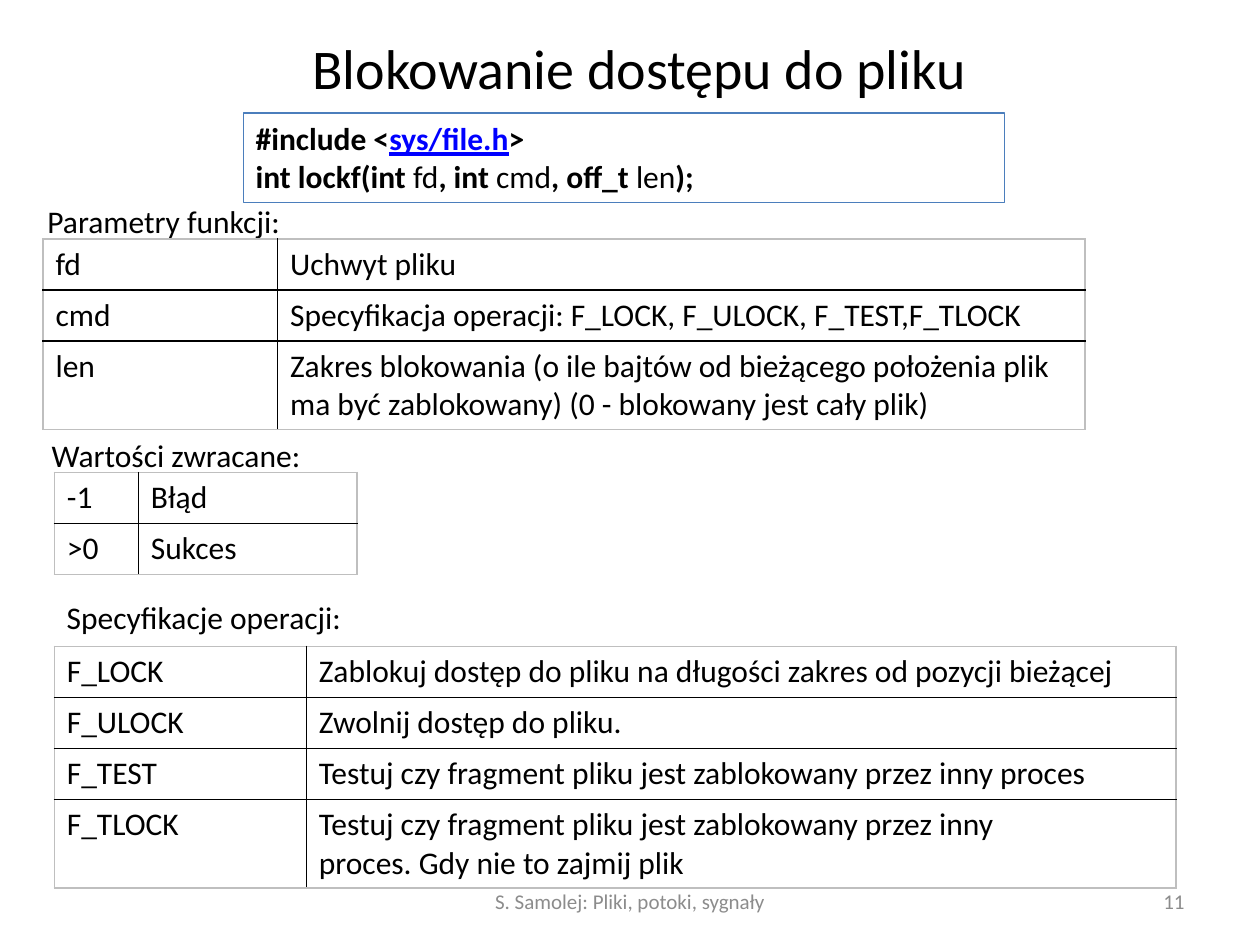
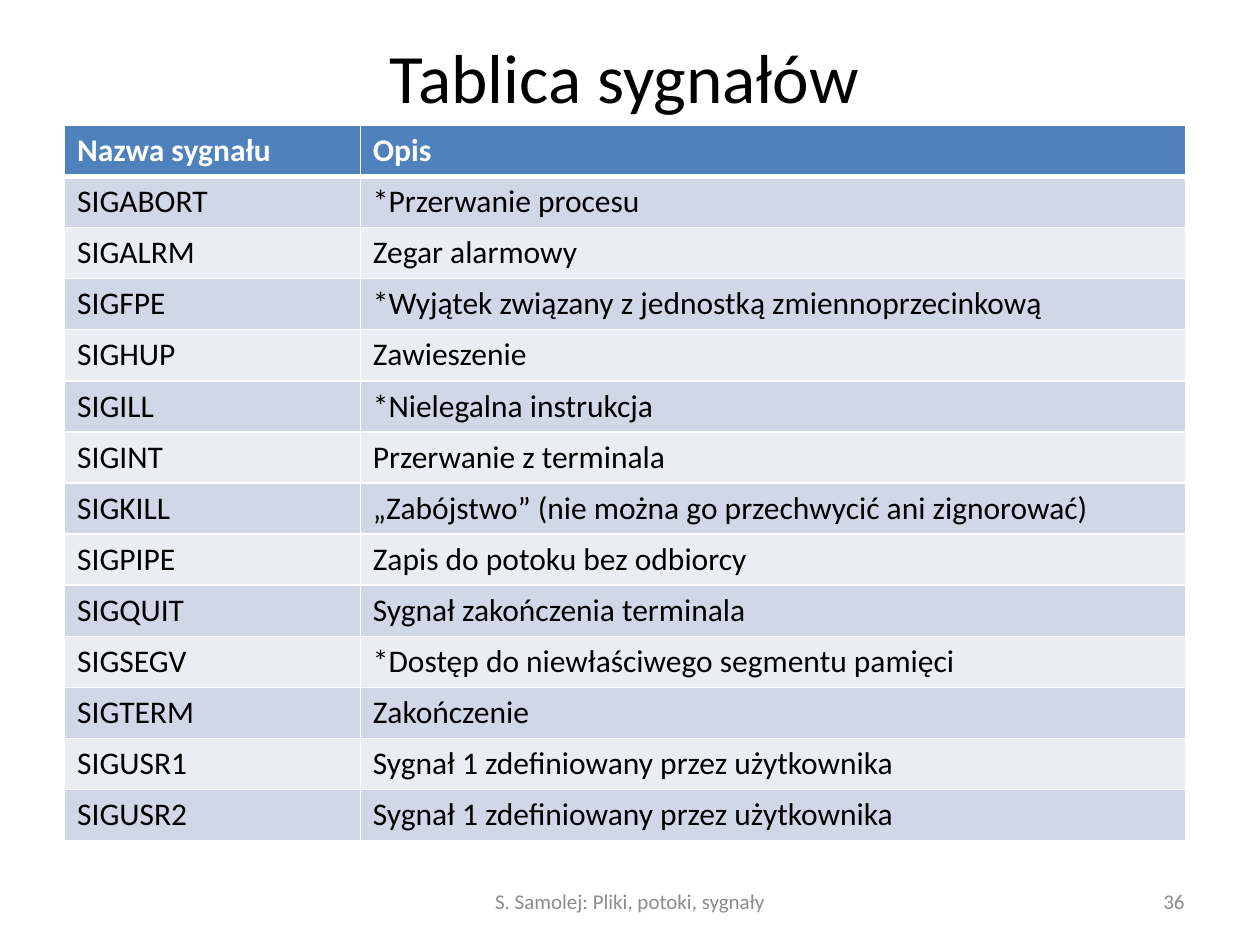
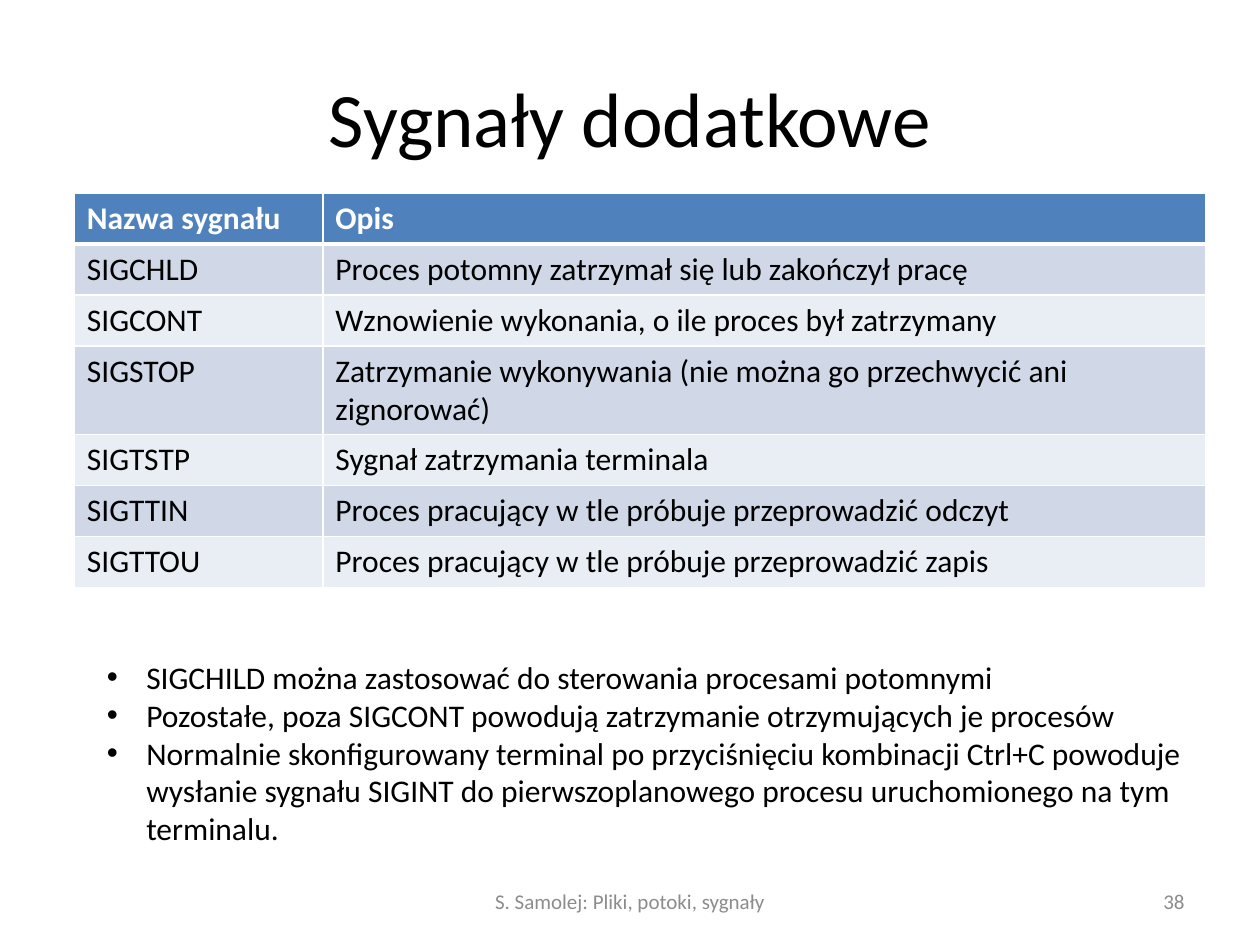
from lxml import etree
from pptx import Presentation
from pptx.dml.color import RGBColor
from pptx.enum import shapes, text
from pptx.oxml import ns
from pptx.util import Pt

BLACK = RGBColor(0x00, 0x00, 0x00)
WHITE = RGBColor(0xFF, 0xFF, 0xFF)
GREY = RGBColor(0x8C, 0x8C, 0x8C)
PALE = RGBColor(0xBF, 0xBF, 0xBF)
LINK = RGBColor(0x00, 0x00, 0xFF)
OUTLINE = RGBColor(0x4B, 0x7E, 0xBC)
HEADER = RGBColor(0x4F, 0x81, 0xBD)
BANDS = [RGBColor(0xE9, 0xED, 0xF4), RGBColor(0xD0, 0xD8, 0xE8)]

FONT = "Calibri"
FOOTER = "S. Samolej: Pliki, potoki, sygnały"
ROW, TALL_ROW = 29.2, 50.4
CENTER, RIGHT = text.PP_ALIGN.CENTER, text.PP_ALIGN.RIGHT
MIDDLE = text.MSO_ANCHOR.MIDDLE


def write(tf, paragraphs, color=BLACK, size=18, align=None, anchor=None):
    tf.word_wrap = True
    tf.vertical_anchor = anchor
    for i, runs in enumerate(paragraphs):
        p = tf.paragraphs[0] if i == 0 else tf.add_paragraph()
        p.alignment = align
        for words, bold in runs:
            r = p.add_run()
            r.text = words
            r.font.color.rgb = color
            for key, value in {"name": FONT, "size": Pt(size), "bold": bold}.items():
                setattr(r.font, key, value)


def add_grid(s, left, top, widths, rows, tall=None, banded=False):
    last_row, last_col = len(rows) - 1, len(widths) - 1
    heights = [TALL_ROW if i == tall else ROW for i in range(len(rows))]
    table = s.shapes.add_table(len(rows), len(widths), Pt(left), Pt(top),
                               Pt(sum(widths)), Pt(sum(heights))).table
    table.first_row = banded
    table.horz_banding = False
    for column, width in zip(table.columns, widths):
        column.width = Pt(width)
    for i, row in enumerate(rows):
        table.rows[i].height = Pt(heights[i])
        for j, words in enumerate(row):
            cell = table.cell(i, j)
            head = banded and i == 0
            write(cell.text_frame, [[(line, head)] for line in words.split("\n")],
                  WHITE if head else BLACK)
            edges = {"lnL": j == 0, "lnR": j == last_col, "lnT": i == 0, "lnB": i == last_row}
            for tag, outer in edges.items():
                thick = banded and (i, tag) in [(0, "lnB"), (1, "lnT")]
                color = WHITE if banded else PALE if outer else BLACK
                ln = etree.SubElement(cell._tc.get_or_add_tcPr(), ns.qn("a:" + tag),
                                      w=str(Pt(3 if thick else 1)))
                fill = etree.SubElement(ln, ns.qn("a:solidFill"))
                etree.SubElement(fill, ns.qn("a:srgbClr"), val=str(color))
            if banded:
                cell.fill.solid()
                cell.fill.fore_color.rgb = HEADER if head else BANDS[i % 2]
            else:
                cell.fill.background()


prs = Presentation()
prs.slide_width, prs.slide_height = Pt(720), Pt(540)

titles = [
    ("Blokowanie dostępu do pliku", 32, 658.8, 33.1, "11"),
    ("Tablica sygnałów", 39.6, 641.5, 43.9, "36"),
    ("Sygnały dodatkowe", 44, 648, 90, "38"),
]
for title, size, width, height, number in titles:
    s = prs.slides.add_slide(prs.slide_layouts[6])
    for words, box, color, points, align in [
        (title, (36, 21.6, width, height), BLACK, size, CENTER),
        (FOOTER, (246, 500.5, 228, 28.75), GREY, 12, CENTER),
        (number, (516, 500.5, 168, 28.75), GREY, 12, RIGHT),
    ]:
        sp = s.shapes.add_textbox(*map(Pt, box))
        write(sp.text_frame, [[(words, False)]], color, points, align, MIDDLE)

locking, signals, extra = prs.slides

sp = locking.shapes.add_shape(shapes.MSO_SHAPE.RECTANGLE, Pt(139), Pt(64.6), Pt(435), Pt(51))
sp.shadow.inherit = False
sp.fill.background()
sp.line.color.rgb = OUTLINE
sp.line.width = Pt(0.75)
write(sp.text_frame, [
    [("#include <", True), ("sys/file.h", True), (">", True)],
    [("int lockf(int ", True), ("fd", False), (", int ", True), ("cmd", False),
     (", off_t ", True), ("len", False), (");", True)],
], align=text.PP_ALIGN.LEFT, anchor=text.MSO_ANCHOR.TOP)
link = sp.text_frame.paragraphs[0].runs[1].font
link.color.rgb = LINK
link.underline = True

for label, left, top, width in [
    ("Parametry funkcji:", 20, 111.6, 164),
    ("Wartości zwracane:", 22.5, 245.5, 164),
    ("Specyfikacje operacji:", 31, 338, 176),
]:
    sp = locking.shapes.add_textbox(Pt(left), Pt(top), Pt(width), Pt(29))
    write(sp.text_frame, [[(label, False)]])

add_grid(locking, 24.6, 136.6, [134, 461.5], [
    ("fd", "Uchwyt pliku"),
    ("cmd", "Specyfikacja operacji: F_LOCK, F_ULOCK, F_TEST,F_TLOCK"),
    ("len", "Zakres blokowania (o ile bajtów od bieżącego położenia plik ma być "
            "zablokowany) (0 - blokowany jest cały plik)"),
], tall=2)
add_grid(locking, 31, 270, [48, 125], [("-1", "Błąd"), (">0", "Sukces")])
add_grid(locking, 31, 369.3, [144, 497], [
    ("F_LOCK", "Zablokuj dostęp do pliku na długości zakres od pozycji bieżącej"),
    ("F_ULOCK", "Zwolnij dostęp do pliku."),
    ("F_TEST", "Testuj czy fragment pliku jest zablokowany przez inny proces"),
    ("F_TLOCK", "Testuj czy fragment pliku jest zablokowany przez inny\n"
                "proces. Gdy nie to zajmij plik"),
], tall=3)

columns = ("Nazwa sygnału", "Opis")
add_grid(signals, 36.9, 71.6, [169, 471.5], [
    columns,
    ("SIGABORT", "*Przerwanie procesu"),
    ("SIGALRM", "Zegar alarmowy"),
    ("SIGFPE", "*Wyjątek związany z jednostką zmiennoprzecinkową"),
    ("SIGHUP", "Zawieszenie"),
    ("SIGILL", "*Nielegalna instrukcja"),
    ("SIGINT", "Przerwanie z terminala"),
    ("SIGKILL", "„Zabójstwo” (nie można go przechwycić ani zignorować)"),
    ("SIGPIPE", "Zapis do potoku bez odbiorcy"),
    ("SIGQUIT", "Sygnał zakończenia terminala"),
    ("SIGSEGV", "*Dostęp do niewłaściwego segmentu pamięci"),
    ("SIGTERM", "Zakończenie"),
    ("SIGUSR1", "Sygnał 1 zdefiniowany przez użytkownika"),
    ("SIGUSR2", "Sygnał 1 zdefiniowany przez użytkownika"),
], banded=True)

add_grid(extra, 42.5, 110.2, [142, 504.5], [
    columns,
    ("SIGCHLD", "Proces potomny zatrzymał się lub zakończył pracę"),
    ("SIGCONT", "Wznowienie wykonania, o ile proces był zatrzymany"),
    ("SIGSTOP", "Zatrzymanie wykonywania (nie można go przechwycić ani zignorować)"),
    ("SIGTSTP", "Sygnał zatrzymania terminala"),
    ("SIGTTIN", "Proces pracujący w tle próbuje przeprowadzić odczyt"),
    ("SIGTTOU", "Proces pracujący w tle próbuje przeprowadzić zapis"),
], tall=3, banded=True)

remarks = [
    "SIGCHILD można zastosować do sterowania procesami potomnymi",
    "Pozostałe, poza SIGCONT powodują zatrzymanie otrzymujących je procesów",
    "Normalnie skonfigurowany terminal po przyciśnięciu kombinacji Ctrl+C powoduje wysłanie "
    "sygnału SIGINT do pierwszoplanowego procesu uruchomionego na tym terminalu.",
]
sp = extra.shapes.add_textbox(Pt(54), Pt(372.5), Pt(646.5), Pt(116.5))
write(sp.text_frame, [[(remark, False)] for remark in remarks])
for p in sp.text_frame.paragraphs:
    pPr = p._p.get_or_add_pPr()
    pPr.set("marL", str(Pt(22.5)))
    pPr.set("indent", str(-Pt(22.5)))
    etree.SubElement(pPr, ns.qn("a:buFont"), typeface="Arial")
    etree.SubElement(pPr, ns.qn("a:buChar"), char="•")

prs.save("out.pptx")
